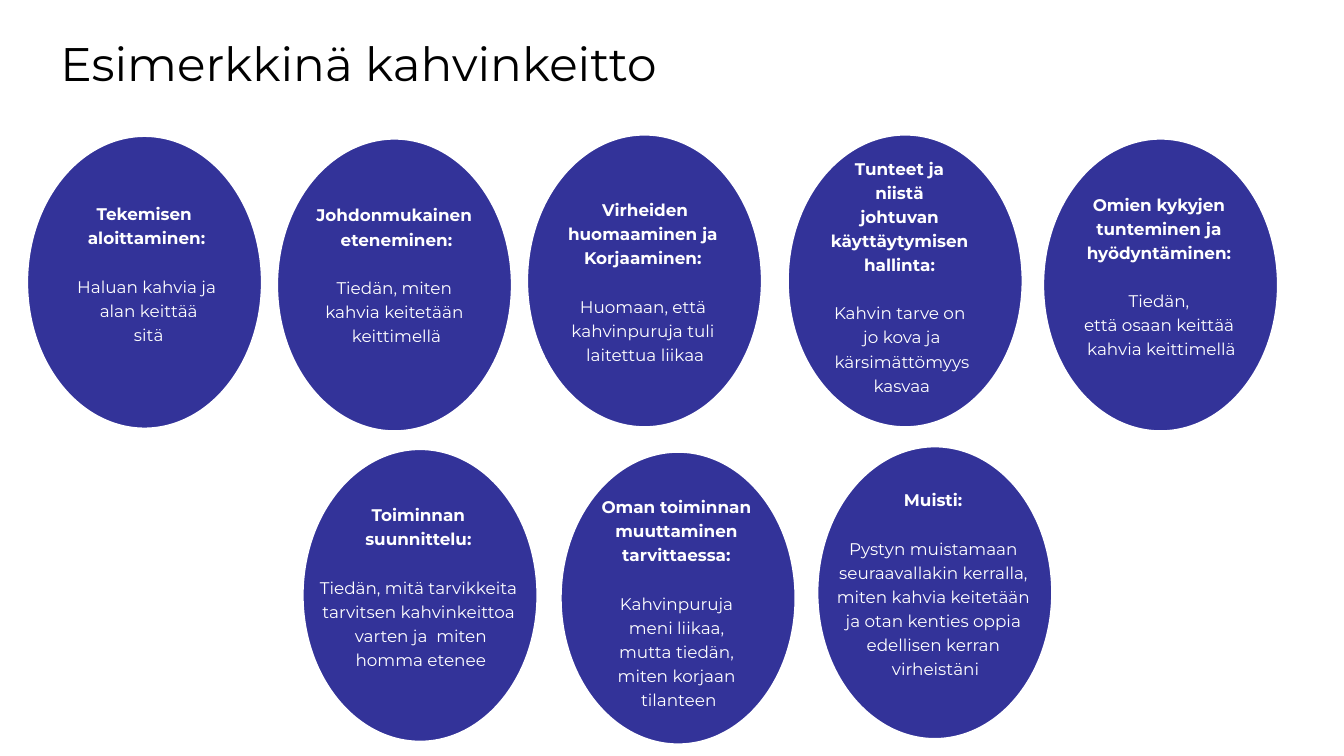
from dataclasses import dataclass

from pptx import Presentation
from pptx.dml.color import RGBColor
from pptx.enum.shapes import MSO_SHAPE as Shape
from pptx.enum.text import MSO_ANCHOR as Anchor, PP_ALIGN as Align
from pptx.util import Inches, Pt

COLORS = {"background": "FFFFFF", "title": "000000", "bubble": "333399", "light": "FFFFFF"}
FONT = "Montserrat"
OVAL_WIDTH, OVAL_HEIGHT = 2.19, 1.76
TEXT_WIDTH, TEXT_HEIGHT = 2.38, 2.0
HEADING_GAP = 13


@dataclass
class Bubble:
    left: float
    top: float
    text_left: float
    text_top: float
    heading: list[str]
    body: list[str]


BUBBLES = [
    Bubble(-0.02, 1.22, -0.1, 1.05, ["Tekemisen ", "aloittaminen:"],
           ["Haluan kahvia ja", " alan keittää", " sitä"]),
    Bubble(1.84, 1.24, 1.76, 1.06, ["Johdonmukainen ", "eteneminen:"],
           ["Tiedän, miten ", "kahvia keitetään ", "keittimellä"]),
    Bubble(3.7, 1.21, 3.61, 1.11, ["Virheiden", "huomaaminen ja ", "Korjaaminen: "],
           ["Huomaan, että ", "kahvinpuruja tuli ", "laitettua liikaa"]),
    Bubble(5.64, 1.21, 5.52, 1.07,
           ["Tunteet ja ", "niistä ", "johtuvan ", "käyttäytymisen ", "hallinta: "],
           ["Kahvin tarve on ", "jo kova ja", " kärsimättömyys ", "kasvaa"]),
    Bubble(7.54, 1.24, 7.45, 1.07, ["Omien kykyjen ", "tunteminen ja ", "hyödyntäminen: "],
           ["Tiedän, ", "että osaan keittää ", "kahvia keittimellä"]),
    Bubble(2.03, 3.55, 1.94, 3.38, ["Toiminnan ", "suunnittelu: "],
           ["Tiedän, mitä tarvikkeita ", "tarvitsen kahvinkeittoa ",
            "varten ja  miten", "homma etenee"]),
    Bubble(3.95, 3.57, 3.86, 3.5, ["Oman toiminnan ", "muuttaminen ", "tarvittaessa: "],
           ["Kahvinpuruja ", "meni liikaa, ", "mutta tiedän, ", "miten korjaan ", "tilanteen"]),
    Bubble(5.86, 3.53, 5.77, 3.36, ["Muisti: "],
           ["Pystyn muistamaan ", "seuraavallakin kerralla, ", "miten kahvia keitetään ",
            "ja otan kenties oppia ", "edellisen kerran ", "virheistäni"]),
]


def color(name: str) -> RGBColor:
    return RGBColor.from_string(COLORS[name])


def write(paragraph, text: str, *, size: float, fill: str, bold: bool = False,
          align=Align.LEFT, line_spacing: float = 1.0,
          before: float = 0, after: float = 0) -> None:
    paragraph.alignment = align
    paragraph.line_spacing = line_spacing
    paragraph.space_before = Pt(before)
    paragraph.space_after = Pt(after)
    run = paragraph.add_run()
    run.text = text
    run.font.name = FONT
    run.font.size = Pt(size)
    run.font.bold = bold
    run.font.color.rgb = color(fill)


def prepare_frame(frame, inset: float, anchor) -> None:
    frame.word_wrap = True
    frame.vertical_anchor = anchor
    frame.margin_left = frame.margin_right = Inches(inset)
    frame.margin_top = frame.margin_bottom = Inches(inset)


def draw_title(slide, text: str) -> None:
    title = slide.shapes.title
    title.left, title.top = Inches(0.35), Inches(0.16)
    title.width, title.height = Inches(9.99), Inches(0.58)
    prepare_frame(title.text_frame, 0.1, Anchor.TOP)
    write(title.text_frame.paragraphs[0], text, size=25.2, fill="title")


def draw_bubble(slide, bubble: Bubble) -> None:
    group = slide.shapes.add_group_shape()
    oval = group.shapes.add_shape(Shape.OVAL, Inches(bubble.left), Inches(bubble.top),
                                  Inches(OVAL_WIDTH), Inches(OVAL_HEIGHT))
    oval.rotation = 90
    oval.shadow.inherit = False
    oval.fill.solid()
    oval.fill.fore_color.rgb = color("bubble")
    oval.line.color.rgb = color("light")
    oval.line.width = Pt(2)

    box = group.shapes.add_textbox(Inches(bubble.text_left), Inches(bubble.text_top),
                                   Inches(TEXT_WIDTH), Inches(TEXT_HEIGHT))
    frame = box.text_frame
    prepare_frame(frame, 0.01, Anchor.MIDDLE)
    heading_count = len(bubble.heading)
    for index, line in enumerate(bubble.heading + bubble.body):
        paragraph = frame.add_paragraph() if index else frame.paragraphs[0]
        write(paragraph, line, size=9, fill="light", bold=index < heading_count,
              align=Align.CENTER, line_spacing=0.9, after=3.15,
              before=HEADING_GAP if index == heading_count else 0)


def main() -> None:
    presentation = Presentation()
    presentation.slide_width = Inches(10)
    presentation.slide_height = Inches(10 * 9 / 16)
    slide = presentation.slides.add_slide(presentation.slide_layouts[5])
    slide.background.fill.solid()
    slide.background.fill.fore_color.rgb = color("background")
    draw_title(slide, "Esimerkkinä kahvinkeitto")
    for bubble in BUBBLES:
        draw_bubble(slide, bubble)
    presentation.save("out.pptx")


if __name__ == "__main__":
    main()
